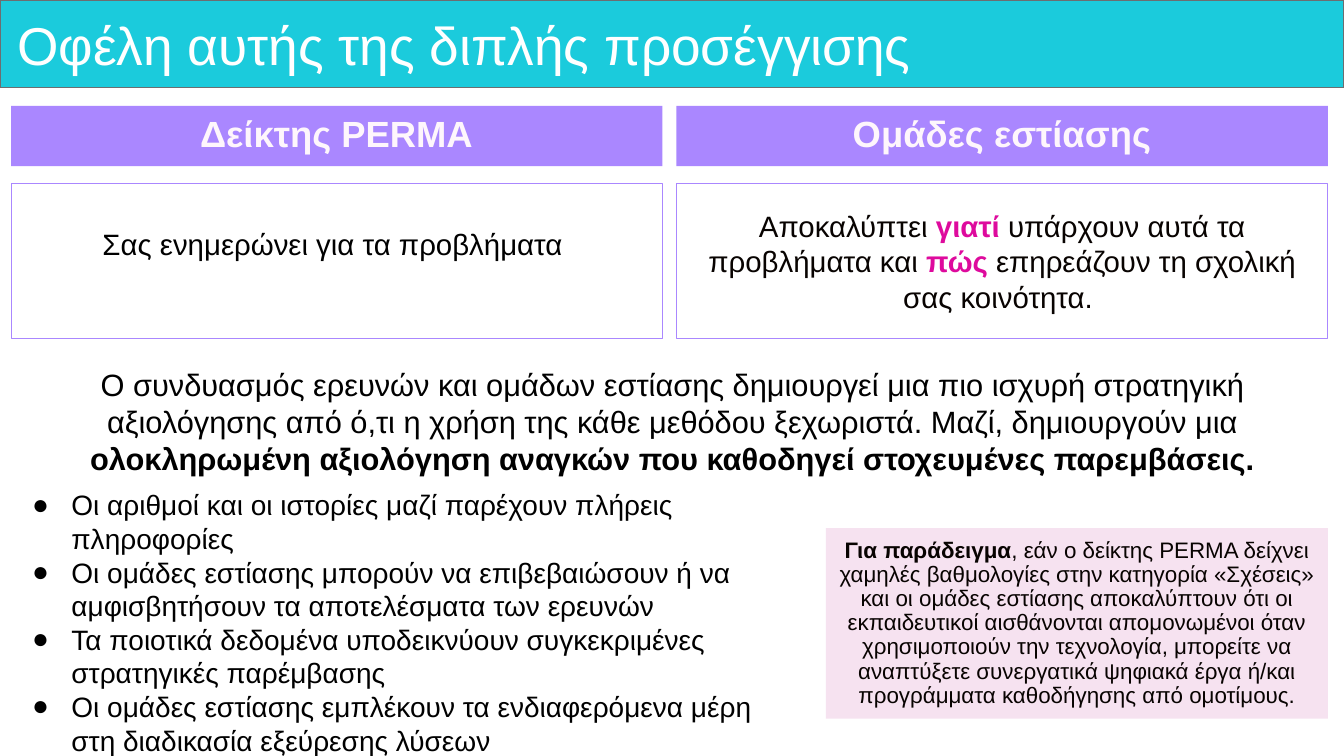
from dataclasses import dataclass
from typing import Optional

from lxml import etree
from pptx import Presentation
from pptx import util as u
from pptx.dml.color import RGBColor
from pptx.enum import shapes, text
from pptx.oxml.ns import qn

PX = 9144
FONT = "Arial"
WHITE = RGBColor(0xFF, 0xFF, 0xFF)
BLACK = RGBColor(0x00, 0x00, 0x00)
INK = RGBColor(0x08, 0x03, 0x01)
CYAN = RGBColor(0x1B, 0xCB, 0xDC)
GRAY = RGBColor(0x6C, 0x6E, 0x70)
PURPLE = RGBColor(0xAA, 0x87, 0xFF)
BLUSH = RGBColor(0xFE, 0xF6, 0xFC)
MAGENTA = RGBColor(0xDE, 0x0A, 0x9D)
PINK = RGBColor(0xF6, 0xE2, 0xF0)

LEFT = 11
COLUMN_WIDTH = 646
COLUMN_STEP = 660


@dataclass(frozen=True)
class Run:
    words: str
    color: RGBColor = INK
    bold: bool = False


@dataclass(frozen=True)
class Box:
    left: int
    top: int
    width: int
    height: int


@dataclass(frozen=True)
class Column:
    heading: str
    message: tuple[Run, ...]
    bottom_inset: int = 5


COLUMNS = (
    Column("Δείκτης PERMA", (Run("Σας ενημερώνει για τα προβλήματα ", BLACK),), 39),
    Column("Ομάδες εστίασης", (
        Run("Αποκαλύπτει "),
        Run("γιατί ", MAGENTA, True),
        Run("υπάρχουν αυτά τα προβλήματα και "),
        Run("πώς ", MAGENTA, True),
        Run("επηρεάζουν τη σχολική σας κοινότητα. "),
    )),
)
SUMMARY = (
    Run("Ο συνδυασμός ερευνών και ομάδων εστίασης δημιουργεί μια πιο ισχυρή στρατηγική "
        "αξιολόγησης από ό,τι η χρήση της κάθε μεθόδου ξεχωριστά. Μαζί, δημιουργούν μια ", BLACK),
    Run("ολοκληρωμένη αξιολόγηση αναγκών που καθοδηγεί στοχευμένες παρεμβάσεις. ", BLACK, True),
)
BENEFITS = (
    "Οι αριθμοί και οι ιστορίες μαζί παρέχουν πλήρεις πληροφορίες",
    "Οι ομάδες εστίασης μπορούν να επιβεβαιώσουν ή να αμφισβητήσουν τα αποτελέσματα των ερευνών",
    "Τα ποιοτικά δεδομένα υποδεικνύουν συγκεκριμένες στρατηγικές παρέμβασης",
    "Οι ομάδες εστίασης εμπλέκουν τα ενδιαφερόμενα μέρη στη διαδικασία εξεύρεσης λύσεων",
)
EXAMPLE = (
    Run("Για παράδειγμα", bold=True),
    Run(", εάν ο δείκτης PERMA δείχνει χαμηλές βαθμολογίες στην κατηγορία «Σχέσεις» και οι ομάδες "
        "εστίασης αποκαλύπτουν ότι οι εκπαιδευτικοί αισθάνονται απομονωμένοι όταν χρησιμοποιούν "
        "την τεχνολογία, μπορείτε να αναπτύξετε συνεργατικά ψηφιακά έργα ή/και προγράμματα "
        "καθοδήγησης από ομοτίμους."),
)


def px(length: int) -> u.Emu:
    return u.Emu(length * PX)


def bounds(box: Box) -> tuple[u.Emu, ...]:
    return px(box.left), px(box.top), px(box.width), px(box.height)


def set_frame(shape, insets: tuple[int, int, int, int], anchor):
    frame = shape.text_frame
    frame.word_wrap = True
    frame.auto_size = text.MSO_AUTO_SIZE.NONE
    frame.vertical_anchor = anchor
    frame.margin_left, frame.margin_top, frame.margin_right, frame.margin_bottom = map(px, insets)
    return frame


def write(paragraph, runs: tuple[Run, ...], size: int, align, spacing: float = 1.0) -> None:
    paragraph.alignment = align
    paragraph.line_spacing = spacing
    for part in runs:
        run = paragraph.add_run()
        run.text = part.words
        run.font.name = FONT
        run.font.size = u.Pt(size)
        run.font.bold = part.bold
        run.font.color.rgb = part.color


def add_panel(slide, box: Box, fill: Optional[RGBColor] = None,
              line: Optional[RGBColor] = None, line_width: float = 0.75):
    shape = slide.shapes.add_shape(shapes.MSO_SHAPE.RECTANGLE, *bounds(box))
    shape.shadow.inherit = False
    if fill is None:
        shape.fill.background()
    else:
        shape.fill.solid()
        shape.fill.fore_color.rgb = fill
    if line is None:
        shape.line.fill.background()
    else:
        shape.line.color.rgb = line
        shape.line.width = u.Pt(line_width)
    return shape


def fill_panel(shape, runs: tuple[Run, ...], size: int, spacing: float = 1.0,
               bottom_inset: int = 5) -> None:
    frame = set_frame(shape, (10, 5, 10, bottom_inset), text.MSO_ANCHOR.MIDDLE)
    write(frame.paragraphs[0], runs, size, text.PP_ALIGN.CENTER, spacing)


def add_text(slide, box: Box):
    shape = slide.shapes.add_textbox(*bounds(box))
    return set_frame(shape, (10, 10, 10, 10), text.MSO_ANCHOR.TOP)


def add_bullet(paragraph) -> None:
    properties = paragraph._p.get_or_add_pPr()
    properties.set("marL", str(px(50)))
    properties.set("indent", str(px(-39)))
    color = etree.SubElement(properties, qn("a:buClr"))
    etree.SubElement(color, qn("a:srgbClr"), val=str(BLACK))
    etree.SubElement(properties, qn("a:buFont"), typeface=FONT)
    etree.SubElement(properties, qn("a:buChar"), char="●")


def add_title(slide) -> None:
    title = slide.shapes.title
    title.left, title.top, title.width, title.height = bounds(Box(LEFT, 9, 1306, 78))
    frame = set_frame(title, (6, 6, 6, 6), text.MSO_ANCHOR.MIDDLE)
    write(frame.paragraphs[0], (Run("Οφέλη αυτής της διπλής προσέγγισης", WHITE),),
          38, text.PP_ALIGN.LEFT, 0.9)
    band = add_panel(slide, Box(0, 0, 1333, 87), CYAN, GRAY, 1)
    title.element.addprevious(band.element)


def add_columns(slide) -> None:
    for index, column in enumerate(COLUMNS):
        left = LEFT + index * COLUMN_STEP
        message = add_panel(slide, Box(left, 182, COLUMN_WIDTH, 154), line=PURPLE)
        fill_panel(message, column.message, 21, bottom_inset=column.bottom_inset)
        heading = add_panel(slide, Box(left, 105, COLUMN_WIDTH, 60), PURPLE)
        fill_panel(heading, (Run(column.heading, BLUSH, True),), 26, 0.9)


def add_benefits(slide) -> None:
    frame = add_text(slide, Box(LEFT, 474, 785, 290))
    for index, benefit in enumerate(BENEFITS):
        paragraph = frame.add_paragraph() if index else frame.paragraphs[0]
        add_bullet(paragraph)
        write(paragraph, (Run(benefit, BLACK),), 20, text.PP_ALIGN.LEFT)


def main() -> None:
    presentation = Presentation()
    presentation.slide_width = px(1333)
    presentation.slide_height = px(750)
    slide = presentation.slides.add_slide(presentation.slide_layouts[5])
    add_title(slide)
    add_columns(slide)
    summary = add_text(slide, Box(76, 353, 1182, 131))
    write(summary.paragraphs[0], SUMMARY, 22, text.PP_ALIGN.CENTER)
    add_benefits(slide)
    example = add_panel(slide, Box(819, 524, 498, 189), PINK)
    fill_panel(example, EXAMPLE, 16, 0.9)
    presentation.save("out.pptx")


if __name__ == "__main__":
    main()
